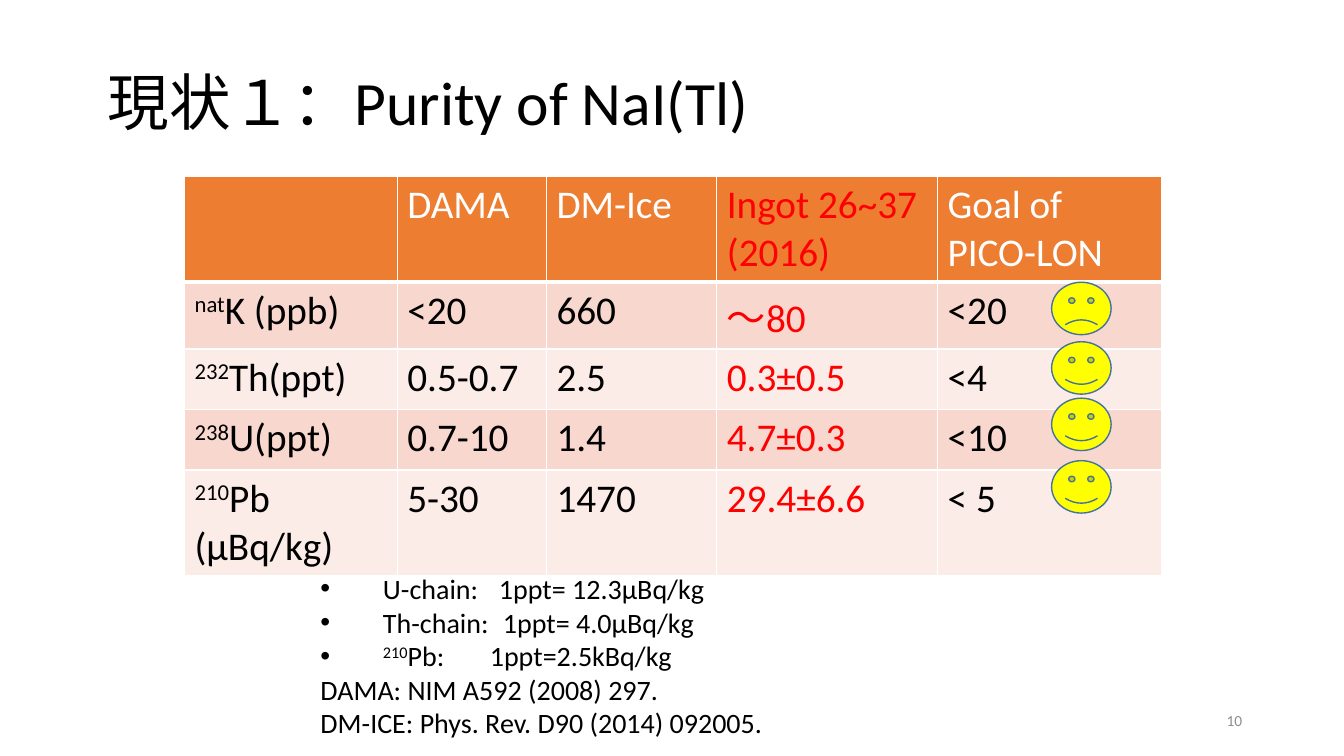
from lxml import etree
from pptx import Presentation
from pptx.dml.color import RGBColor
from pptx.enum.shapes import MSO_SHAPE
from pptx.enum.text import MSO_ANCHOR, MSO_AUTO_SIZE, PP_ALIGN
from pptx.oxml.ns import qn
from pptx.util import Inches, Pt

FACE = MSO_SHAPE.SMILEY_FACE
MIDDLE = MSO_ANCHOR.MIDDLE
LEFT, RIGHT = PP_ALIGN.LEFT, PP_ALIGN.RIGHT
NO_FIT = MSO_AUTO_SIZE.NONE
HUES = {
    "black": "000000", "white": "FFFFFF", "red": "FF0000", "gray": "8C8C8C",
    "head": "ED7D31", "odd": "F8D7CE", "even": "FCECE8",
    "yellow": "FFFF00", "edge": "43739E",
}


def hue(name):
    return RGBColor.from_string(HUES[name])


def write(para, text, size, color="black"):
    """Add text run by run; a part before "^" is raised."""
    up, mark, rest = text.rpartition("^")
    for part, base in ((up, 30000), (rest, 0)):
        if not part:
            continue
        run = para.add_run()
        run.text = part
        run.font.name = "Calibri"
        run.font.size = Pt(size)
        run.font.color.rgb = hue(color)
        if base:
            run.font._element.set("baseline", str(base))


prs = Presentation()
prs.slide_width, prs.slide_height = Inches(13.33), Inches(7.5)
slide = prs.slides.add_slide(prs.slide_layouts[5])
shapes = slide.shapes

# Title
title = shapes.title
title.left, title.top = Inches(0.97), Inches(0.32)
title.width, title.height = Inches(11.5), Inches(1.45)
frame = title.text_frame
frame.auto_size = NO_FIT
frame.vertical_anchor = MIDDLE
para = frame.paragraphs[0]
para.alignment = LEFT
para.line_spacing = 0.9
write(para, "現状１：Purity of NaI(Tl)", 44)

# Purity table
rows = [
    ["", "DAMA", "DM-Ice", "Ingot 26~37\n(2016)", "Goal of PICO-LON"],
    ["nat^K (ppb)", "<20", "660", "～80", "<20"],
    ["232^Th(ppt)", "0.5-0.7", "2.5", "0.3±0.5", "<4"],
    ["238^U(ppt)", "0.7-10", "1.4", "4.7±0.3", "<10"],
    ["210^Pb\n(μBq/kg)", "5-30", "1470", "29.4±6.6", "< 5"],
]
widths = [2.11, 1.48, 1.69, 2.19, 2.22]
table = shapes.add_table(len(rows), len(widths), Inches(1.83), Inches(1.75),
                         Inches(sum(widths)), Inches(0.6 * len(rows))).table
for col, width in zip(table.columns, widths):
    col.width = Inches(width)
for r, row in enumerate(rows):
    for c, text in enumerate(row):
        cell = table.cell(r, c)
        props = cell._tc.get_or_add_tcPr()
        for side in ("lnL", "lnR", "lnT", "lnB"):
            thick = (r, side) in ((0, "lnB"), (1, "lnT"))
            line = etree.SubElement(props, qn("a:" + side), w=str(Pt(3 if thick else 1)))
            fill = etree.SubElement(line, qn("a:solidFill"))
            etree.SubElement(fill, qn("a:srgbClr"), val=HUES["white"])
        cell.fill.solid()
        cell.fill.fore_color.rgb = hue("head" if r == 0 else "odd" if r % 2 else "even")
        color = "red" if c == 3 else "black" if r else "white"
        for i, part in enumerate(text.split("\n")):
            frame = cell.text_frame
            para = frame.add_paragraph() if i else frame.paragraphs[0]
            write(para, part, 28, color)

# Unit notes, with a tab stop before each value, and references
notes = [
    ("U-chain:\t1ppt= 12.3μBq/kg", 1.77),
    ("Th-chain:\t1ppt= 4.0μBq/kg", 1.81),
    ("210^Pb:\t1ppt=2.5kBq/kg", 1.68),
    ("DAMA: NIM A592 (2008) 297.", None),
    ("DM-ICE: Phys. Rev. D90 (2014) 092005.", None),
]
frame = shapes.add_textbox(Inches(3.08), Inches(5.62), Inches(8.35), Inches(1.78)).text_frame
frame.word_wrap = True
for i, (text, stop) in enumerate(notes):
    para = frame.add_paragraph() if i else frame.paragraphs[0]
    write(para, text, 20)
    if stop:
        props = para._p.get_or_add_pPr()
        props.set("marL", str(Inches(0.62)))
        props.set("indent", str(-Inches(0.62)))
        etree.SubElement(props, qn("a:buFont"), typeface="Arial")
        etree.SubElement(props, qn("a:buChar"), char="•")
        tabs = etree.SubElement(props, qn("a:tabLst"))
        etree.SubElement(tabs, qn("a:tab"), pos=str(Inches(stop)), algn="l")

# Slide number
frame = shapes.add_textbox(Inches(9.42), Inches(6.95), Inches(3), Inches(0.4)).text_frame
frame.word_wrap = True
frame.vertical_anchor = MIDDLE
para = frame.paragraphs[0]
para.alignment = RIGHT
write(para, "10", 11, "gray")

# One face per table row: a frown, then smiles
for top, bend in ((2.8, -0.047), (3.39, 0.047), (3.95, 0.047), (4.57, 0.047)):
    face = shapes.add_shape(FACE, Inches(10.43), Inches(top), Inches(0.59), Inches(0.52))
    face.adjustments[0] = bend
    face.shadow.inherit = False
    face.fill.solid()
    face.fill.fore_color.rgb = hue("yellow")
    face.line.color.rgb = hue("edge")
    face.line.width = Pt(1)

prs.save("out.pptx")
